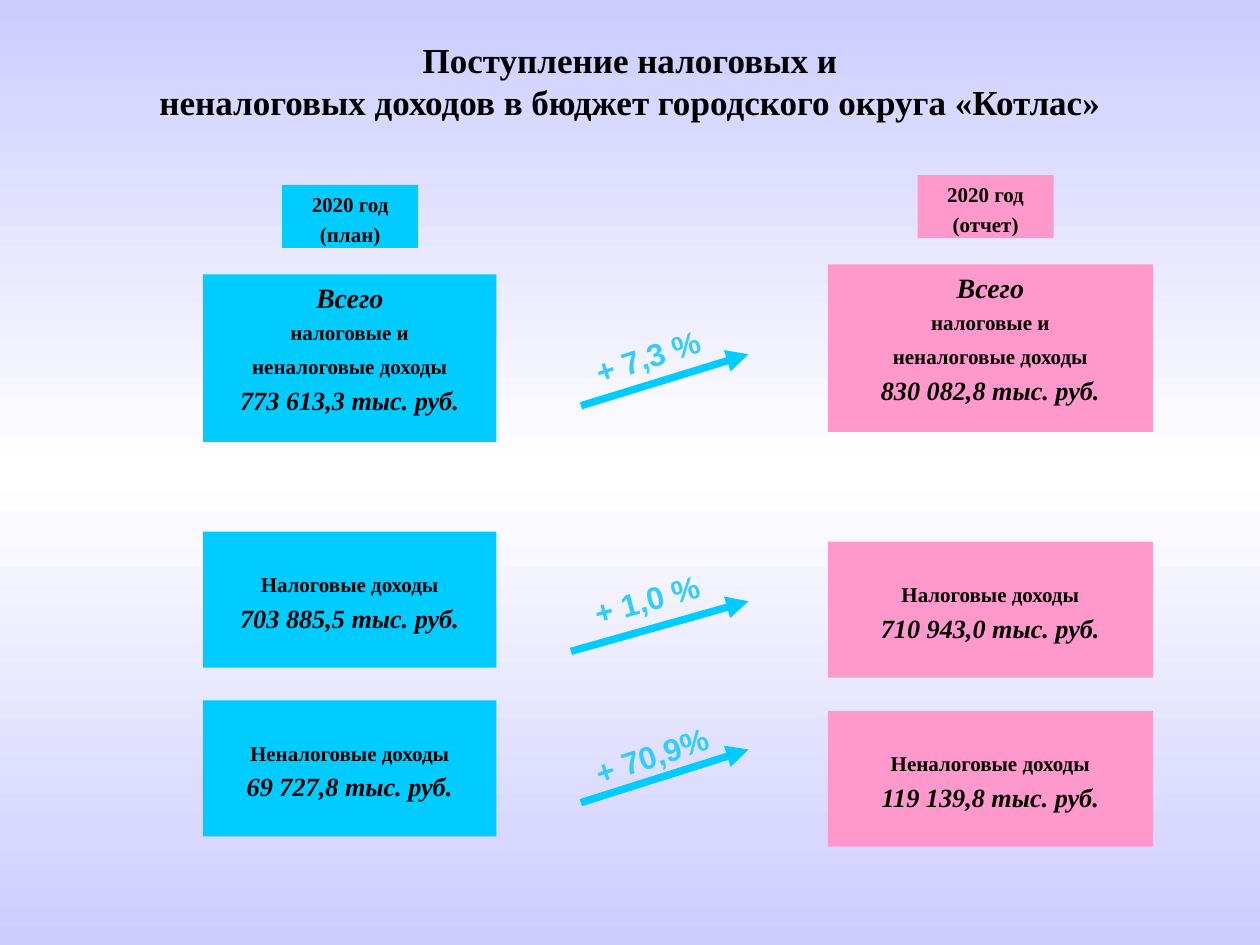
from copy import deepcopy

from lxml.etree import SubElement
from pptx import Presentation
from pptx.dml.color import RGBColor
from pptx.enum.shapes import MSO_CONNECTOR, MSO_SHAPE
from pptx.enum.text import MSO_ANCHOR, MSO_AUTO_SIZE, PP_ALIGN
from pptx.oxml.ns import qn
from pptx.util import Cm, Pt

LAVENDER = RGBColor(0xCC, 0xCC, 0xFF)
WHITE = RGBColor(0xFF, 0xFF, 0xFF)
BLACK = RGBColor(0x00, 0x00, 0x00)
CYAN = RGBColor(0x00, 0xCC, 0xFF)
PINK = RGBColor(0xFF, 0x99, 0xCC)
SKY = RGBColor(0x33, 0xCC, 0xFF)

SERIF = "Times New Roman"
SANS = "Arial"
TITLE = [
    "Поступление налоговых и",
    "неналоговых доходов в бюджет городского округа «Котлас»",
]


def paint_background(page):
    """Fill the page with a vertical lavender, white, lavender gradient."""
    fill = page.background.fill
    fill.gradient()
    fill.gradient_angle = 270
    stop_list = page.element.find(".//" + qn("a:gsLst"))
    stop_list.insert(1, deepcopy(stop_list[0]))
    colours = (LAVENDER, WHITE, LAVENDER)
    for stop, colour, position in zip(fill.gradient_stops, colours, (0, 0.5, 1)):
        stop.color.rgb = colour
        stop.position = position


def style(para, size, font=SERIF, colour=BLACK, italic=False):
    """Centre a paragraph and format its runs in bold."""
    para.alignment = PP_ALIGN.CENTER
    for span in para.runs:
        span.font.name = font
        span.font.size = Pt(size)
        span.font.color.rgb = colour
        span.font.bold = True
        span.font.italic = italic


def set_title(page):
    """Place and format the page title."""
    title = page.shapes.title
    title.left, title.top, title.width, title.height = Cm(1.27), Cm(0.84), Cm(22.86), Cm(1.57)
    frame = title.text_frame
    frame.text = "\n".join(TITLE)
    frame.auto_size = MSO_AUTO_SIZE.NONE
    frame.vertical_anchor = MSO_ANCHOR.MIDDLE
    for para in frame.paragraphs:
        style(para, 20)


def add_box(page, left, top, width, height, fill, lines, inset=0.13):
    """Add a filled rectangle with lines of (text, size, italic, space before)."""
    box = page.shapes.add_shape(MSO_SHAPE.RECTANGLE, Cm(left), Cm(top), Cm(width), Cm(height))
    box.shadow.inherit = False
    box.fill.solid()
    box.fill.fore_color.rgb = fill
    box.line.fill.background()
    frame = box.text_frame
    frame.text = "\n".join(line[0] for line in lines)
    frame.vertical_anchor = MSO_ANCHOR.TOP
    frame.margin_top = Cm(inset)
    for para, (_, size, italic, before) in zip(frame.paragraphs, lines):
        style(para, size, italic=italic)
        para.space_before = Pt(before)


def add_column(page, fill, kind, head_left, left, width, tops, amounts):
    """Add the heading, total and two income boxes of one column."""
    head_top, total_top, *part_tops = tops
    total, *parts = [(f"{amount} тыс. руб.", 15, True, 3) for amount in amounts]
    heading = [("2020 год", 12, False, 0), (f"({kind})", 12, False, 3)]
    add_box(page, head_left, head_top, 2.74, 1.27, fill, heading)
    total_lines = [
        ("Всего", 16, True, 0),
        ("налоговые и", 12, False, 3),
        ("неналоговые доходы", 12, False, 5),
        total,
    ]
    add_box(page, left, total_top, width, 3.38, fill, total_lines)
    names = ("Налоговые доходы", "Неналоговые доходы")
    for name, top, part in zip(names, part_tops, parts):
        add_box(page, left, top, width, 2.74, fill, [(name, 12, False, 0), part], inset=0.8)


def add_arrow(page, start_x, start_y, end_y):
    """Add a thick rising arrow between the columns."""
    arrow = page.shapes.add_connector(
        MSO_CONNECTOR.STRAIGHT, Cm(start_x), Cm(start_y), Cm(15.09), Cm(end_y)
    )
    arrow.line.color.rgb = CYAN
    arrow.line.width = Pt(4.25)
    SubElement(arrow.line._get_or_add_ln(), qn("a:tailEnd"), type="triangle")
    SubElement(arrow.element.spPr, qn("a:effectLst"))


def add_growth(page, text, left, top, width, height, angle):
    """Add a tilted growth label above an arrow."""
    label = page.shapes.add_textbox(Cm(left), Cm(top), Cm(width), Cm(height))
    label.rotation = angle
    frame = label.text_frame
    frame.text = text
    frame.word_wrap = False
    frame.vertical_anchor = MSO_ANCHOR.TOP
    style(frame.paragraphs[0], 18, SANS, SKY)


def main():
    """Build the income slide and save it."""
    deck = Presentation()
    deck.slide_width, deck.slide_height = Cm(25.4), Cm(19.05)
    page = deck.slides.add_slide(deck.slide_layouts[5])
    paint_background(page)
    set_title(page)
    add_column(page, CYAN, "план", 5.69, 4.09, 5.92, (3.73, 5.53, 10.72, 14.12),
               ("773 613,3", "703 885,5", "69 727,8"))
    add_column(page, PINK, "отчет", 18.5, 16.69, 6.55, (3.53, 5.33, 10.92, 14.33),
               ("830 082,8", "710 943,0", "119 139,8"))
    for arrow in ((11.71, 8.18, 7.14), (11.51, 13.13, 12.12), (11.71, 16.18, 15.11)):
        add_arrow(page, *arrow)
    add_growth(page, "+ 7,3 %", 11.53, 6.76, 2.84, 0.18, 341.9)
    add_growth(page, "+ 1,0 %", 11.56, 11.58, 2.9, 0.81, 344.7)
    add_growth(page, "+ 70,9%", 11.43, 14.73, 3.3, 0.64, 341.9)
    deck.save("out.pptx")


if __name__ == "__main__":
    main()
